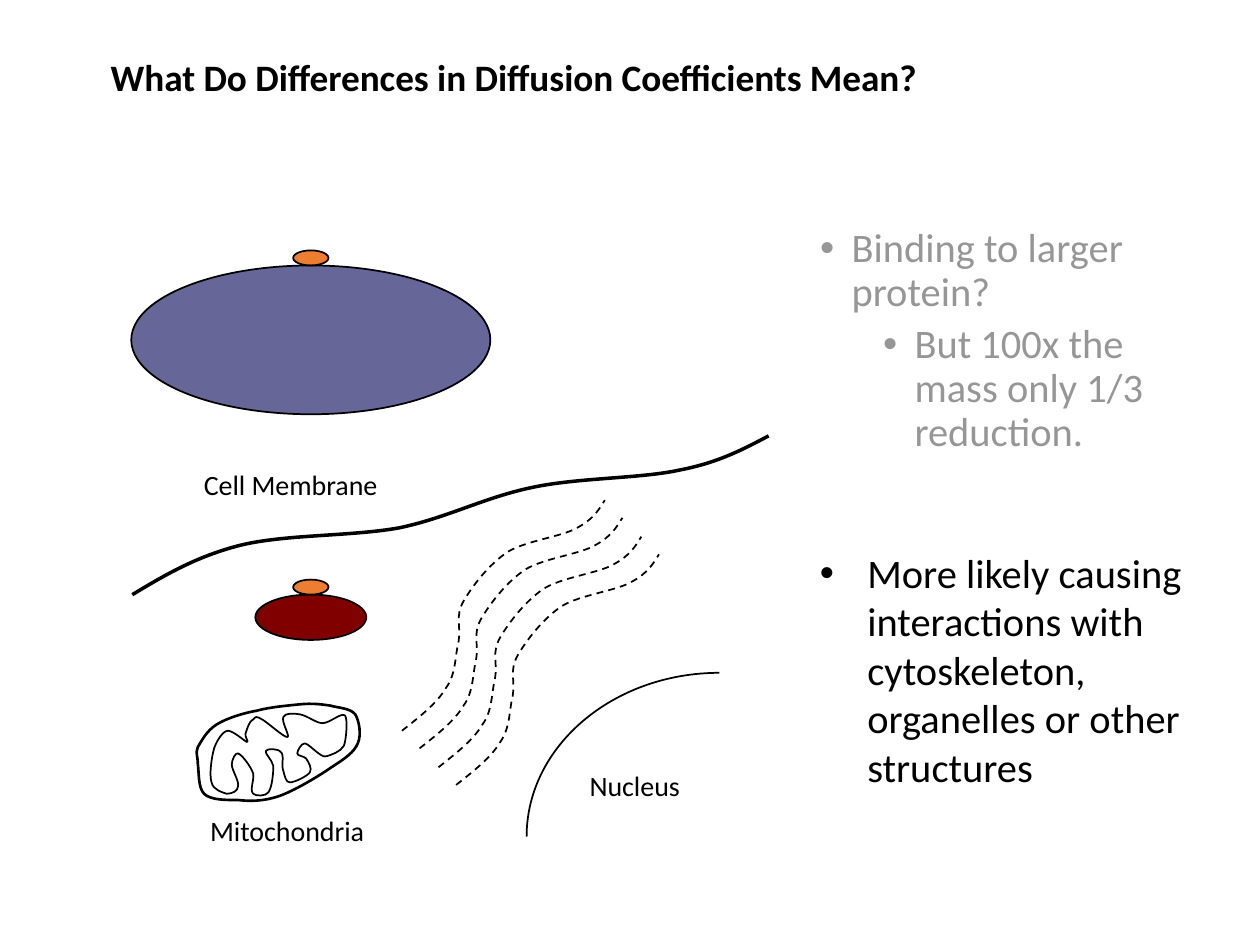
from dataclasses import dataclass
from lxml import etree
from pptx import Presentation
from pptx.dml.color import RGBColor
from pptx.enum.dml import MSO_LINE
from pptx.enum.shapes import MSO_SHAPE
from pptx.oxml.ns import qn
from pptx.util import Pt

ELLIPSE = MSO_SHAPE.OVAL
DASH = MSO_LINE.DASH


@dataclass(frozen=True)
class Theme:
    font: str = "Calibri"
    ink: str = "000000"
    muted: str = "969696"
    ligand: str = "ED7D31"
    small_protein: str = "800000"
    large_protein: str = "666699"
    title: float = 21.3
    body: float = 23.1
    label: float = 16


THEME = Theme()
UNIT = Pt(0.72)

TITLE = "What Do Differences in Diffusion Coefficients Mean?"
TITLE_BOX = (56.2, 30.2, 607.7, 79.9)
BINDING = [
    dict(text="Binding to larger protein?", margin=18, hang=18, line=0.9),
    dict(text="But 100x the mass only 1/3 reduction.", margin=54, hang=18,
         line=0.9, before=5, level=1),
]
BINDING_BOX = (461.5, 126.7, 226.8, 200.9)
INTERACTIONS = [
    dict(text="More likely causing interactions with cytoskeleton, "
              "organelles or other structures", margin=27, hang=27),
]
INTERACTIONS_BOX = (461.5, 309.6, 233.3, 182.2)
LABELS = [
    ("Nucleus", (329.8, 435.6, 67, 26.6)),
    ("Cell Membrane", (109.4, 263.5, 115.2, 26.6)),
    ("Mitochondria", (113, 461.5, 103.7, 26.6)),
]

PROTEIN_CENTER = 177.6
LIGAND_SIZE = (20.2, 8.6)
PROTEINS = [
    (339.8, 63.4, 25.9, THEME.small_protein),
    (151.7, 205.2, 85, THEME.large_protein),
]

NUCLEUS = [(571, 534), (487, 534), (418, 592), (418, 664)]
MEMBRANE = [
    (105, 472), (130, 457), (155, 442), (190, 433), (226, 424), (278, 426),
    (317, 419), (355, 411), (384, 395), (422, 387), (459, 379), (509, 380),
    (540, 373), (571, 367), (591, 356), (610, 346),
]
INNER_FOLDS = [
    (170, 594), (168, 601), (166, 615), (168, 621), (169, 627), (177, 629),
    (180, 630), (184, 630), (189, 628), (189, 624), (190, 620), (184, 611),
    (184, 607), (184, 603), (187, 597), (189, 598), (192, 599), (199, 608),
    (201, 614), (202, 619), (198, 627), (201, 630), (203, 632), (211, 632),
    (213, 629), (216, 625), (217, 614), (217, 608), (216, 603), (210, 598),
    (211, 596), (212, 594), (221, 594), (223, 597), (226, 599), (223, 608),
    (225, 612), (226, 616), (227, 621), (230, 621), (234, 621), (244, 616),
    (246, 613), (248, 610), (245, 605), (243, 602), (241, 600), (236, 600),
    (236, 598), (236, 596), (239, 590), (242, 590), (244, 590), (250, 596),
    (253, 598), (256, 600), (257, 601), (260, 600), (263, 599), (270, 597),
    (273, 592), (275, 587), (276, 571), (274, 568), (271, 565), (262, 574),
    (256, 574), (251, 574), (244, 568), (238, 567), (233, 566), (226, 566),
    (225, 569), (223, 573), (231, 585), (228, 585), (225, 585), (212, 573),
    (208, 571), (203, 568), (203, 569), (201, 571), (198, 572), (196, 579),
    (195, 582), (194, 585), (198, 589), (196, 589), (194, 588), (185, 580),
    (181, 580), (177, 580), (172, 588), (170, 594),
]
OUTER_WALL = [
    (157, 593), (160, 588), (164, 580), (172, 575), (180, 570), (193, 566),
    (204, 564), (215, 561), (229, 560), (238, 559), (248, 558), (255, 559),
    (262, 560), (269, 562), (278, 562), (282, 567), (285, 572), (287, 583),
    (284, 590), (281, 597), (274, 602), (263, 609), (253, 616), (233, 628),
    (221, 632), (209, 636), (199, 636), (189, 635), (179, 635), (167, 635),
    (162, 630), (157, 625), (158, 612), (157, 606), (157, 600), (155, 598),
    (157, 593),
]
FILAMENT = [
    (319, 580), (333, 569), (347, 558), (354, 546), (362, 535), (361, 521),
    (364, 509), (366, 497), (361, 489), (368, 477), (375, 465), (388, 448),
    (403, 438), (418, 429), (446, 426), (458, 419), (471, 412), (475, 405),
    (480, 397),
]
FILAMENT_COUNT = 4
FILAMENT_STEP = 14.33


def rgb(color):
    return RGBColor.from_string(color)


def add_text(slide, box, items, size, color, bold=False, wrap=True):
    tf = slide.shapes.add_textbox(*map(Pt, box)).text_frame
    tf.word_wrap = wrap
    for i, item in enumerate(items):
        p = tf.add_paragraph() if i else tf.paragraphs[0]
        p.text = item["text"]
        p.level = item.get("level", 0)
        p.line_spacing = item.get("line", 1.0)
        p.space_before = Pt(item.get("before", 0))
        if "hang" in item:
            pPr = p._p.get_or_add_pPr()
            pPr.set("marL", str(Pt(item["margin"])))
            pPr.set("indent", str(-Pt(item["hang"])))
            etree.SubElement(pPr, qn("a:buFont"), typeface="Arial")
            etree.SubElement(pPr, qn("a:buChar"), char="•")
        for r in p.runs:
            r.font.name = THEME.font
            r.font.size = Pt(size)
            r.font.bold = bold
            r.font.color.rgb = rgb(color)


def outline(sp, width):
    sp.shadow.inherit = False
    sp.line.color.rgb = rgb(THEME.ink)
    sp.line.width = Pt(width)


def add_curve(slide, points, width, close=False, dash=None):
    builder = slide.shapes.build_freeform(*points[0], scale=UNIT)
    builder.add_line_segments(points[1:], close=close)
    sp = builder.convert_to_shape()
    segments = list(sp._element.iter(qn("a:lnTo")))
    for i in range(0, len(segments), 3):
        curve = etree.Element(qn("a:cubicBezTo"))
        segments[i].addprevious(curve)
        for segment in segments[i:i + 3]:
            curve.append(segment[0])
            segment.getparent().remove(segment)
    sp.fill.background()
    outline(sp, width)
    if dash:
        sp.line.dash_style = dash


def add_ellipse(slide, center, top, width, height, color):
    box = (center - width / 2, top, width, height)
    sp = slide.shapes.add_shape(ELLIPSE, *map(Pt, box))
    sp.fill.solid()
    sp.fill.fore_color.rgb = rgb(color)
    outline(sp, 1)


def main():
    prs = Presentation()
    prs.slide_width, prs.slide_height = Pt(720), Pt(540)
    s = prs.slides.add_slide(prs.slide_layouts[6])

    add_text(s, TITLE_BOX, [dict(text=TITLE, line=0.9)], THEME.title, THEME.ink, bold=True)
    add_text(s, BINDING_BOX, BINDING, THEME.body, THEME.muted)
    add_text(s, INTERACTIONS_BOX, INTERACTIONS, THEME.body, THEME.ink)

    add_curve(s, NUCLEUS, 1)
    add_curve(s, MEMBRANE, 2)
    add_curve(s, INNER_FOLDS, 1, close=True)
    add_curve(s, OUTER_WALL, 1.5, close=True)
    for i in range(FILAMENT_COUNT):
        shift = i * FILAMENT_STEP
        add_curve(s, [(x + shift, y + shift) for x, y in FILAMENT], 1, dash=DASH)

    for text, box in LABELS:
        add_text(s, box, [dict(text=text)], THEME.label, THEME.ink, wrap=False)

    for top, width, height, color in PROTEINS:
        add_ellipse(s, PROTEIN_CENTER, top, width, height, color)
        add_ellipse(s, PROTEIN_CENTER, top - LIGAND_SIZE[1], *LIGAND_SIZE, THEME.ligand)

    prs.save("out.pptx")


if __name__ == "__main__":
    main()
